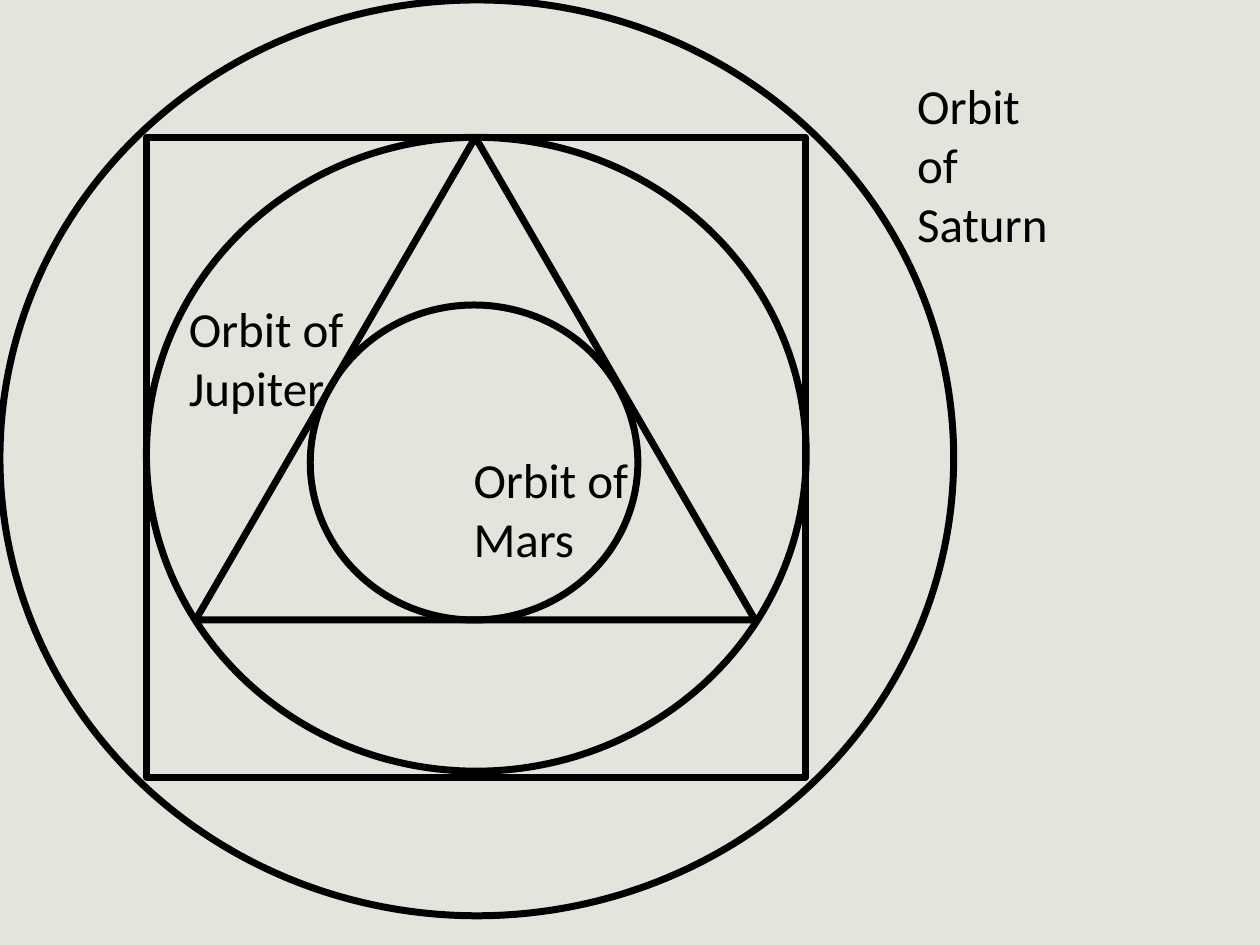
from pptx import Presentation
from pptx.dml.color import RGBColor
from pptx.enum.shapes import MSO_SHAPE as Preset
from pptx.enum.text import MSO_AUTO_SIZE as AutoSize
from pptx.util import Pt

COLORS = {"background": "E3E4DC", "ink": "000000"}

presentation = Presentation()
presentation.slide_width, presentation.slide_height = Pt(720), Pt(540)
slide = presentation.slides.add_slide(presentation.slide_layouts[6])
slide.background.fill.solid()
slide.background.fill.fore_color.rgb = RGBColor.from_string(COLORS["background"])


def add_outline(preset, left, top, width, height):
    shape = slide.shapes.add_shape(preset, Pt(left), Pt(top), Pt(width), Pt(height))
    shape.shadow.inherit = False
    shape.fill.background()
    shape.line.color.rgb = RGBColor.from_string(COLORS["ink"])
    shape.line.width = Pt(4)


def add_label(text, left, top, width, height, size=28, font="Calibri", color="ink"):
    box = slide.shapes.add_textbox(Pt(left), Pt(top), Pt(width), Pt(height))
    frame = box.text_frame
    frame.word_wrap = True
    frame.auto_size = AutoSize.SHAPE_TO_FIT_TEXT
    run = frame.paragraphs[0].add_run()
    run.text = text
    run.font.size = Pt(size)
    run.font.name = font
    run.font.color.rgb = RGBColor.from_string(COLORS[color])


# Nested figures, from the outermost orbit inwards
square_left, square_top = 83.7, 78.5
add_outline(Preset.OVAL, 0, 0, 545, 523.3)
add_label("Orbit of Saturn", 517, 39.6, 95.8, 108.7)
add_outline(Preset.RECTANGLE, square_left, square_top, 376.6, 365.7)
add_outline(Preset.OVAL, square_left, square_top, 377, 362.2)
add_label("Orbit of Jupiter", 100.8, 167, 135.4, 74.9)
add_outline(Preset.ISOSCELES_TRIANGLE, 111.8, square_top, 319.7, 275.8)
add_outline(Preset.OVAL, 177.3, 174.3, 187.2, 180)
add_label("Orbit of Mars", 263.5, 253.5, 135.4, 74.9)

presentation.save("out.pptx")
